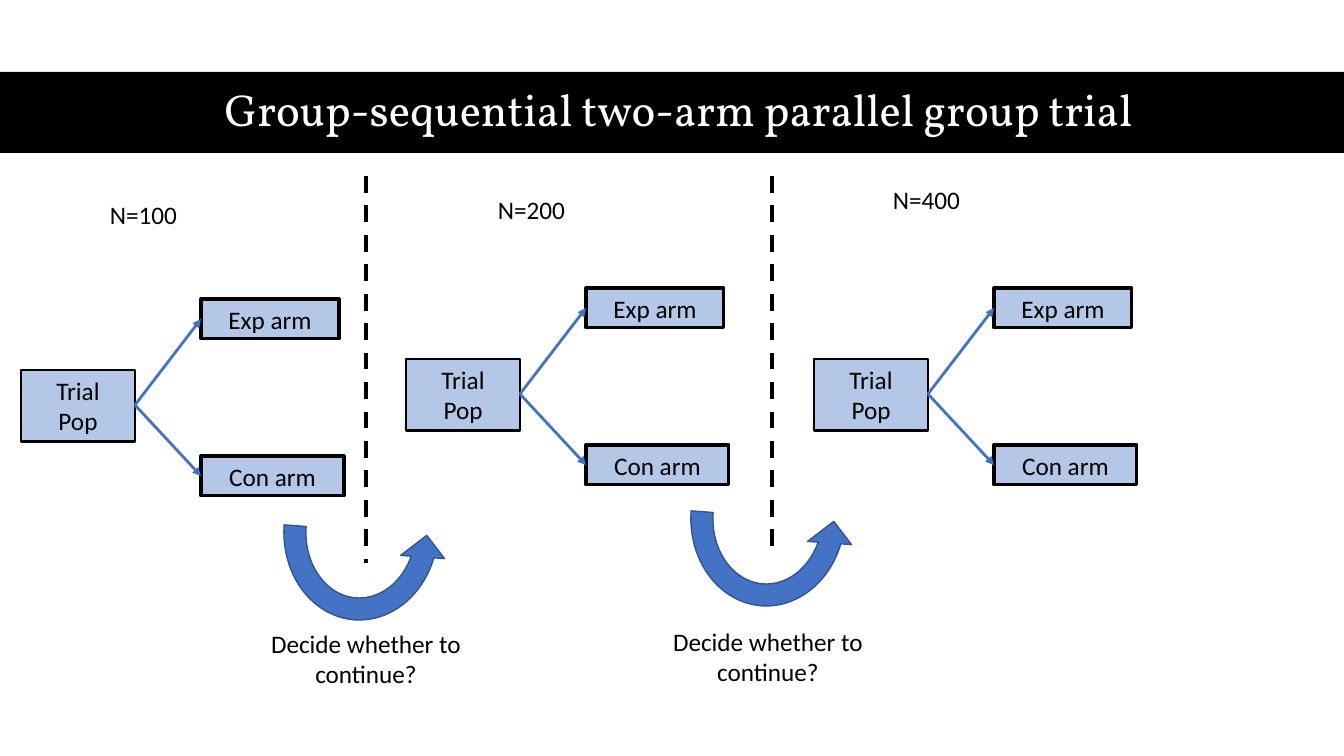
"""Build the slide on the group-sequential two-arm parallel group trial."""
from lxml import etree
from pptx import Presentation
from pptx.dml.color import RGBColor
from pptx.enum.dml import MSO_LINE
from pptx.enum.shapes import MSO_CONNECTOR, MSO_SHAPE
from pptx.enum.text import MSO_ANCHOR, MSO_AUTO_SIZE, PP_ALIGN
from pptx.oxml.ns import qn
from pptx.util import Pt

PX = 914400 / 100.8
BLACK, WHITE, BLUE, PALE, NAVY = "000000", "FFFFFF", "4472C4", "B4C7E7", "325491"


def rgb(code):
    return RGBColor.from_string(code)


def emu(*lengths):
    return [round(n * PX) for n in lengths]


prs = Presentation()
prs.slide_width, prs.slide_height = emu(1344, 756)
s = prs.slides.add_slide(prs.slide_layouts[6])
shapes = s.shapes
boxes, lines, texts = [], [], []

bar = shapes.add_shape(MSO_SHAPE.RECTANGLE, *emu(0, 72, 1344, 81))
boxes.append((bar, BLACK, None, 0))
title = shapes.add_textbox(*emu(61, 71, 1236, 81))
texts.append((title, "Group-sequential two-arm parallel group trial", PP_ALIGN.CENTER))

for x, y in [(21, 370), (406, 359), (814, 359)]:
    stage = shapes.add_group_shape().shapes
    for dx, dy, w, h, label, width in [
        (0, 0, 114, 72, "Trial\nPop", 2),
        (180, 86, 143, 40, "Con arm", 2.25),
        (180, -71, 138, 40, "Exp arm", 2.25),
    ]:
        box = stage.add_shape(MSO_SHAPE.RECTANGLE, *emu(x + dx, y + dy, w, h))
        boxes.append((box, PALE, BLACK, width))
        texts.append((box, label, PP_ALIGN.CENTER))
    for dy in (-51, 106):
        arrow = stage.add_connector(
            MSO_CONNECTOR.STRAIGHT, *emu(x + 114, y + 35, x + 180, y + dy))
        lines.append((arrow, BLUE, 2))
        etree.SubElement(arrow.line._get_or_add_ln(), qn("a:tailEnd"), type="triangle")

for x, bottom in [(366, 563), (772, 551)]:
    divider = shapes.add_connector(MSO_CONNECTOR.STRAIGHT, *emu(x, 176, x, bottom))
    divider.line.dash_style = MSO_LINE.DASH
    lines.append((divider, BLACK, 3))

for x, y, label in [(100, 194, "N=100"), (488, 189, "N=200"), (883, 179, "N=400")]:
    size = shapes.add_textbox(*emu(x, y, 184, 40))
    texts.append((size, label, PP_ALIGN.LEFT))

for x, y, text_x, text_y in [(273, 430, 225, 623), (680, 416, 627, 621)]:
    turn = shapes.add_shape(MSO_SHAPE.CIRCULAR_ARROW, *emu(x, y, 176, 201))
    turn.rotation = 184.2
    turn._element.spPr.get_or_add_xfrm().set("flipH", "1")
    boxes.append((turn, BLUE, NAVY, 1))
    decision = shapes.add_textbox(*emu(text_x, text_y, 282, 72))
    texts.append((decision, "Decide whether to continue?", PP_ALIGN.CENTER))

for sp, fill, line, width in boxes:
    sp.shadow.inherit = False
    sp.fill.solid()
    sp.fill.fore_color.rgb = rgb(fill)
    if line:
        sp.line.color.rgb = rgb(line)
        sp.line.width = Pt(width)
    else:
        sp.line.fill.background()

for cxn, color, width in lines:
    cxn.line.color.rgb = rgb(color)
    cxn.line.width = Pt(width)
    etree.SubElement(cxn._element.spPr, qn("a:effectLst"))

for sp, text, align in texts:
    tf = sp.text_frame
    tf.text = text
    tf.word_wrap = True
    tf.auto_size = MSO_AUTO_SIZE.SHAPE_TO_FIT_TEXT
    tf.vertical_anchor = MSO_ANCHOR.TOP
    for p in tf.paragraphs:
        p.alignment = align
        for r in p.runs:
            r.font.name = "Calibri"
            r.font.size = Pt(18)
            r.font.color.rgb = rgb(BLACK)

tf = title.text_frame
tf.auto_size = MSO_AUTO_SIZE.NONE
tf.vertical_anchor = MSO_ANCHOR.MIDDLE
p = tf.paragraphs[0]
p.line_spacing = 0.9
r = p.runs[0]
r.font.name = "Vollkorn"
r.font.size = Pt(32)
r.font.color.rgb = rgb(WHITE)

prs.save("out.pptx")
